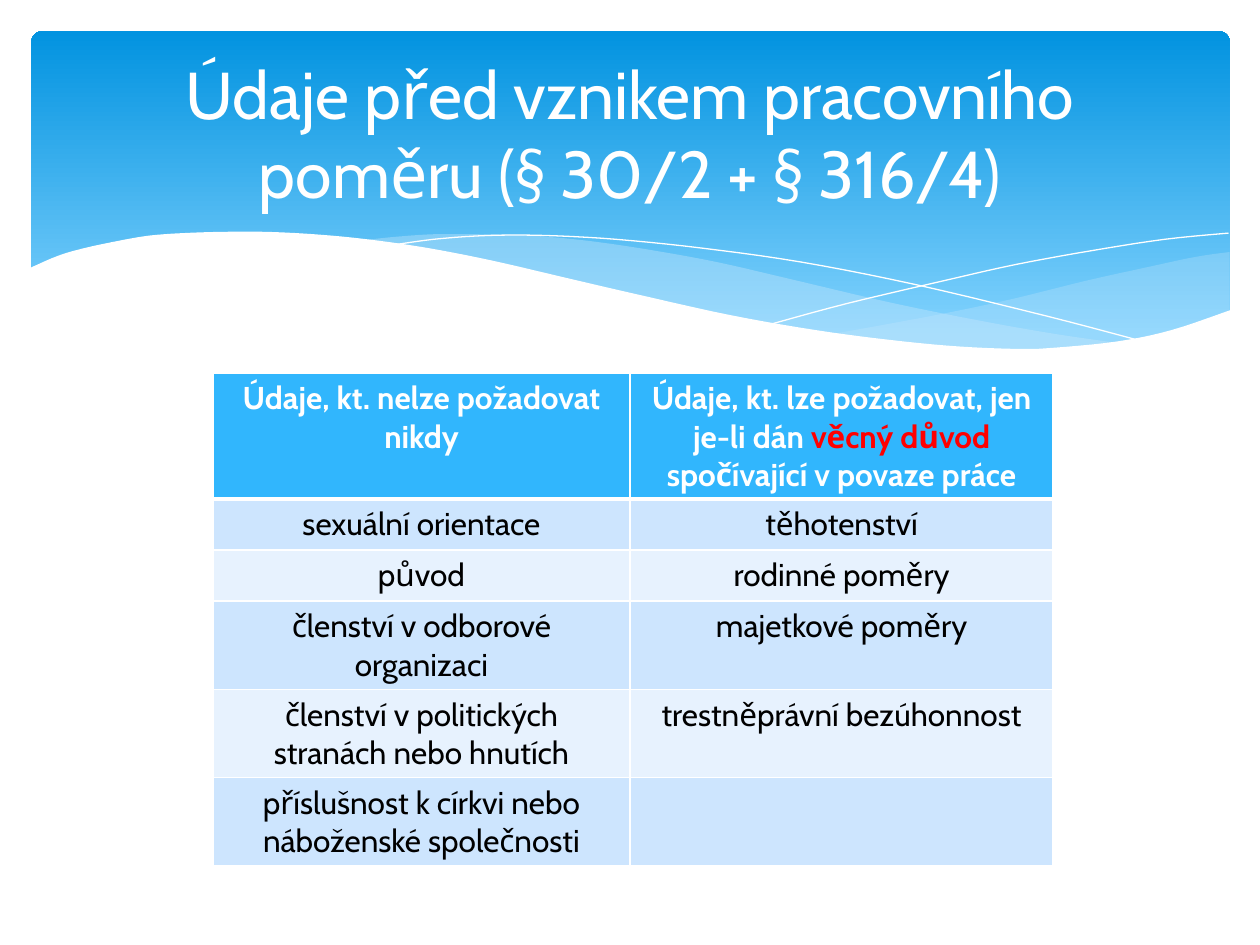
from lxml.etree import SubElement
from pptx import Presentation
from pptx.dml.color import RGBColor
from pptx.enum.shapes import MSO_SHAPE
from pptx.enum.text import MSO_ANCHOR, PP_ALIGN
from pptx.oxml import parse_xml
from pptx.oxml.ns import nsdecls, qn
from pptx.util import Pt

FONT = "Cabin"
WHITE, BLACK, RED = "FFFFFF", "000000", "FF0000"
HEADER_BLUE, BANDS = "31B6FD", ("CDE5FE", "E7F2FE")
BANNER_LIGHT, BANNER_DARK, WISP_BLUE = "83D3FE", "0293E0", "C6E7FC"

TITLE = "Údaje před vznikem pracovního poměru (§ 30/2 + § 316/4)"
HEADERS = [
    [("Údaje, kt. nelze požadovat nikdy", WHITE)],
    [("Údaje, kt. lze požadovat, jen je-li dán ", WHITE),
     ("věcný důvod ", RED),
     ("spočívající v povaze práce", WHITE)],
]
BODY = [
    ("sexuální orientace", "těhotenství"),
    ("původ", "rodinné poměry"),
    ("členství v odborové organizaci", "majetkové poměry"),
    ("členství v politických stranách nebo hnutích", "trestněprávní bezúhonnost"),
    ("příslušnost k církvi nebo náboženské společnosti", ""),
]
COLUMN_WIDTHS, ROW_HEIGHT = (238.3, 241.9), 29.2

# Each curve is a list of (x, y) points that a smooth line passes through.
RIGHT_WISP = [
    [(702.7, 144), (682.6, 146.9), (652.3, 153.4), (619.9, 160.6), (579.6, 170.6),
     (542.2, 178.6), (508.3, 185), (475.9, 190.8)],
    [(475.9, 190.8), (507.6, 195.1), (536.4, 198), (578.2, 200.2), (614.9, 198.7),
     (645.8, 194.4), (673.2, 187.9), (702.7, 177.8)],
]
MIDDLE_WISP = [
    [(643, 196.6), (602.6, 190.8), (558, 182.9), (508.3, 172.8), (452.9, 159.8),
     (409.7, 149.8), (370.1, 142.6), (334.8, 137.5), (302.4, 134.6), (273.6, 133.9),
     (247.7, 133.9), (225.4, 135.4), (205.9, 137.5)],
    [(205.9, 137.5), (246.2, 143.3), (290.9, 151.9), (323.3, 159.8), (381.6, 172.8),
     (432.7, 183.6), (478.8, 191.5), (519.8, 197.3), (556.6, 199.4), (589, 200.2),
     (617, 199.4), (643, 196.6)],
]
FALLING_LINE = [
    (222.5, 140.4), (247.7, 136.8), (278.6, 134.6), (311.8, 134.6), (352.1, 136.8),
    (401, 141.8), (457.9, 149.8), (523.4, 162.7), (598.3, 180.7), (653, 195.1)]
RISING_LINE = [
    (441.4, 185), (483.8, 173.5), (538.6, 160.6), (580.3, 151.2), (623.5, 143.3),
    (665.3, 136.8), (702, 133.2)]
WHITE_WAVE = [
    [(703.4, 177.1), (669.6, 188.6), (638.6, 195.1), (602.6, 198.7), (582.5, 199.4),
     (547.9, 198), (509.8, 194.4), (465.8, 188.6), (416.9, 180), (362.2, 167.8),
     (321.8, 158.4), (281.5, 149), (244.8, 141.8), (210.2, 136.8), (180, 133.9),
     (151.9, 132.5), (127.4, 132.5), (105.1, 133.2), (85.7, 134.6), (68.4, 137.5),
     (48.2, 141.8), (33.1, 146.2), (16.6, 153.4)],
    [(16.6, 236.9), (703.4, 236.9)],
]


def color(value):
    return RGBColor.from_string(value)


def smooth(points, steps=5):
    """Return points on a Catmull-Rom curve through the given points."""
    padded = [points[0], *points, points[-1]]
    curve = [points[0]]
    for a, b, c, d in zip(padded, padded[1:], padded[2:], padded[3:]):
        for step in range(1, steps + 1):
            t = step / steps
            curve.append(tuple(
                0.5 * (2 * q + (r - p) * t + (2 * p - 5 * q + 4 * r - s) * t ** 2
                       + (3 * q - p - 3 * r + s) * t ** 3)
                for p, q, r, s in zip(a, b, c, d)))
    return curve


def add_curve(slide, curves, fill=None, opacity=100):
    """Draw a filled outline, or a white hairline when no fill is given."""
    points = [(Pt(x), Pt(y)) for curve in curves for x, y in smooth(curve)]
    builder = slide.shapes.build_freeform(*points[0])
    builder.add_line_segments(points[1:], close=fill is not None)
    shape = builder.convert_to_shape()
    shape.shadow.inherit = False
    if fill is None:
        shape.fill.background()
        shape.line.color.rgb = color(WHITE)
        shape.line.width = Pt(0)
        return
    shape.fill.solid()
    shape.fill.fore_color.rgb = color(fill)
    shape.line.fill.background()
    if opacity < 100:
        fill_color = shape.fill._xPr.find(qn("a:solidFill"))[0]
        SubElement(fill_color, qn("a:alpha")).set("val", str(opacity * 1000))


def add_banner(slide):
    banner = slide.shapes.add_shape(
        MSO_SHAPE.ROUNDED_RECTANGLE, Pt(18), Pt(18), Pt(684.7), Pt(194.4))
    banner.adjustments[0] = 0.03
    banner.shadow.inherit = False
    banner.line.fill.background()
    banner.fill.gradient()
    banner.fill.gradient_angle = 90
    stops = ((0.1, BANNER_LIGHT), (1, BANNER_DARK))
    for stop, (position, value) in zip(banner.fill.gradient_stops, stops):
        stop.position = position
        stop.color.rgb = color(value)


def write_runs(paragraph, runs, size, bold=False):
    paragraph.alignment = PP_ALIGN.CENTER
    paragraph.font.size = Pt(size)
    for text, value in runs:
        run = paragraph.add_run()
        run.text = text
        run.font.name = FONT
        run.font.size = Pt(size)
        run.font.bold = bold
        run.font.color.rgb = color(value)


def add_title(slide):
    title = slide.shapes.add_textbox(Pt(36), Pt(26.6), Pt(648), Pt(98.6))
    title.text_frame.word_wrap = True
    title.text_frame.vertical_anchor = MSO_ANCHOR.MIDDLE
    write_runs(title.text_frame.paragraphs[0], [(TITLE, WHITE)], 37.8)


def set_borders(cell, top, bottom):
    properties = cell._tc.get_or_add_tcPr()
    sides = (("lnL", 0.96), ("lnR", 0.96), ("lnT", top), ("lnB", bottom))
    for index, (side, width) in enumerate(sides):
        properties.insert(index, parse_xml(
            f'<a:{side} {nsdecls("a")} w="{Pt(width)}"><a:solidFill>'
            f'<a:srgbClr val="{WHITE}"/></a:solidFill></a:{side}>'))


def add_data_table(slide):
    rows = [HEADERS] + [[[(text, BLACK)] if text else [] for text in row] for row in BODY]
    frame = slide.shapes.add_table(
        len(rows), len(COLUMN_WIDTHS), Pt(121.7), Pt(213.1),
        Pt(sum(COLUMN_WIDTHS)), Pt(ROW_HEIGHT * len(rows)))
    table = frame.table
    for column, width in zip(table.columns, COLUMN_WIDTHS):
        column.width = Pt(width)
    for row_index, row in enumerate(rows):
        table.rows[row_index].height = Pt(ROW_HEIGHT)
        is_header = row_index == 0
        for column_index, runs in enumerate(row):
            cell = table.cell(row_index, column_index)
            cell.fill.solid()
            cell.fill.fore_color.rgb = color(
                HEADER_BLUE if is_header else BANDS[(row_index - 1) % 2])
            set_borders(cell, top=3 if row_index == 1 else 0.96,
                        bottom=3 if is_header else 0.96)
            write_runs(cell.text_frame.paragraphs[0], runs, 18, bold=is_header)


def main():
    presentation = Presentation()
    presentation.slide_width, presentation.slide_height = Pt(720), Pt(540)
    slide = presentation.slides.add_slide(presentation.slide_layouts[6])
    add_banner(slide)
    add_curve(slide, RIGHT_WISP, WISP_BLUE, 29)
    add_curve(slide, MIDDLE_WISP, WISP_BLUE, 40)
    add_curve(slide, [FALLING_LINE])
    add_curve(slide, [RISING_LINE])
    add_curve(slide, WHITE_WAVE, WHITE)
    add_title(slide)
    add_data_table(slide)
    presentation.save("out.pptx")


if __name__ == "__main__":
    main()
